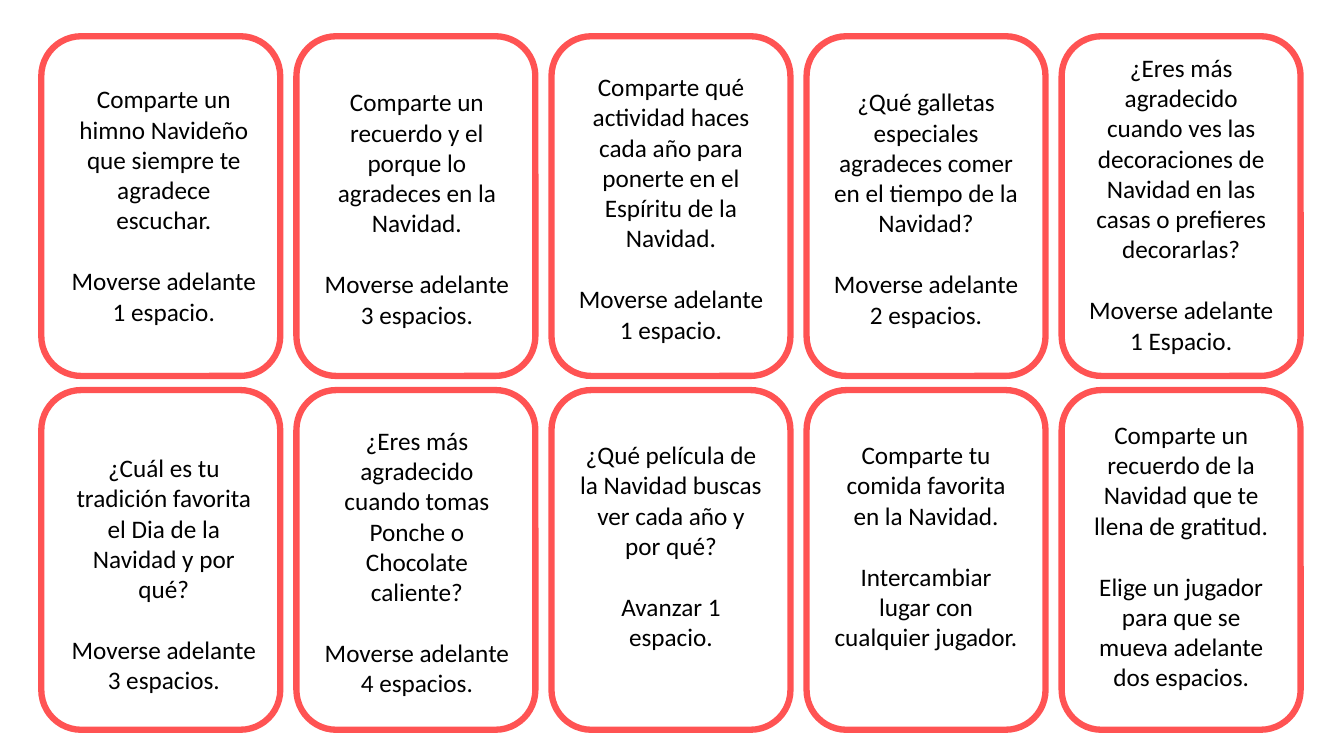
from pptx import Presentation
from pptx import util as u
from pptx.dml.color import RGBColor
from pptx.enum import shapes, text

COLORS = {"border": "FF5353", "card": "FFFFFF", "text": "000000"}
FONT = "Calibri"
FONT_SIZE = 18
LINE_HEIGHT = 22  # points, one line of text

GRID_LEFT, GRID_TOP = 0.41, 0.36
COLUMN_STEP, ROW_STEP = 2.53, 3.51
CARD_WIDTH, CARD_HEIGHT = 2.37, 3.37
TEXT_WIDTH = 2.05
TEXT_INSETS = [0.19, 0.17, 0.16, 0.16, 0.16]  # one per column

# Each card: offset of its text from the card top, text height, prompt, move
CARD_ROWS = [
    [
        (0.42, 2.52, "Comparte un himno Navideño que siempre te agradece escuchar.",
         "Moverse adelante 1 espacio."),
        (0.45, 2.52, "Comparte un recuerdo y el porque lo agradeces en la Navidad.",
         "Moverse adelante 3 espacios."),
        (0.30, 2.83, "Comparte qué actividad haces cada año para ponerte en el "
         "Espíritu de la Navidad.", "Moverse adelante 1 espacio."),
        (0.45, 2.52, "¿Qué galletas especiales agradeces comer en el tiempo de la "
         "Navidad?", "Moverse adelante 2 espacios."),
        (0.11, 3.13, "¿Eres más agradecido cuando ves las decoraciones de Navidad "
         "en las casas o prefieres decorarlas?", "Moverse adelante 1 Espacio."),
    ],
    [
        (0.57, 2.52, "¿Cuál es tu tradición favorita el Dia de la Navidad y por qué?",
         "Moverse adelante 3 espacios."),
        (0.30, 2.83, "¿Eres más agradecido cuando tomas Ponche o Chocolate caliente?",
         "Moverse adelante 4 espacios."),
        (0.44, 2.22, "¿Qué película de la Navidad buscas ver cada año y por qué?",
         "Avanzar 1 espacio."),
        (0.44, 2.22, "Comparte tu comida favorita en la Navidad.",
         "Intercambiar lugar con cualquier jugador."),
        (0.24, 2.83, "Comparte un recuerdo de la Navidad que te llena de gratitud.",
         "Elige un jugador para que se mueva adelante dos espacios."),
    ],
]


def color(name):
    return RGBColor.from_string(COLORS[name])


def write_paragraph(paragraph, content, *, size=FONT_SIZE, space_before=0):
    paragraph.alignment = text.PP_ALIGN.CENTER
    paragraph.space_before = u.Pt(space_before)
    run = paragraph.add_run()
    run.text = content
    run.font.name = FONT
    run.font.size = u.Pt(size)
    run.font.color.rgb = color("text")


def add_card(slide, left, top, text_inset, card):
    text_offset, text_height, prompt, move = card
    group = slide.shapes.add_group_shape()
    frame = group.shapes.add_shape(
        shapes.MSO_SHAPE.ROUNDED_RECTANGLE, u.Inches(left), u.Inches(top),
        u.Inches(CARD_WIDTH), u.Inches(CARD_HEIGHT))
    frame.shadow.inherit = False
    frame.fill.solid()
    frame.fill.fore_color.rgb = color("card")
    frame.line.color.rgb = color("border")
    frame.line.width = u.Pt(4.5)

    box = group.shapes.add_textbox(
        u.Inches(left + text_inset), u.Inches(top + text_offset),
        u.Inches(TEXT_WIDTH), u.Inches(text_height))
    text_frame = box.text_frame
    text_frame.word_wrap = True
    text_frame.auto_size = text.MSO_AUTO_SIZE.SHAPE_TO_FIT_TEXT
    write_paragraph(text_frame.paragraphs[0], prompt)
    write_paragraph(text_frame.add_paragraph(), move, space_before=LINE_HEIGHT)


def add_card_grid(slide, left, top):
    for row, cards in enumerate(CARD_ROWS):
        for column, card in enumerate(cards):
            add_card(slide, left + column * COLUMN_STEP, top + row * ROW_STEP,
                     TEXT_INSETS[column], card)


def main():
    presentation = Presentation()
    presentation.slide_width = u.Inches(13.33)
    presentation.slide_height = u.Inches(7.5)
    blank_layout = presentation.slide_layouts[6]
    slide = presentation.slides.add_slide(blank_layout)
    add_card_grid(slide, GRID_LEFT, GRID_TOP)
    presentation.save("out.pptx")


if __name__ == "__main__":
    main()
